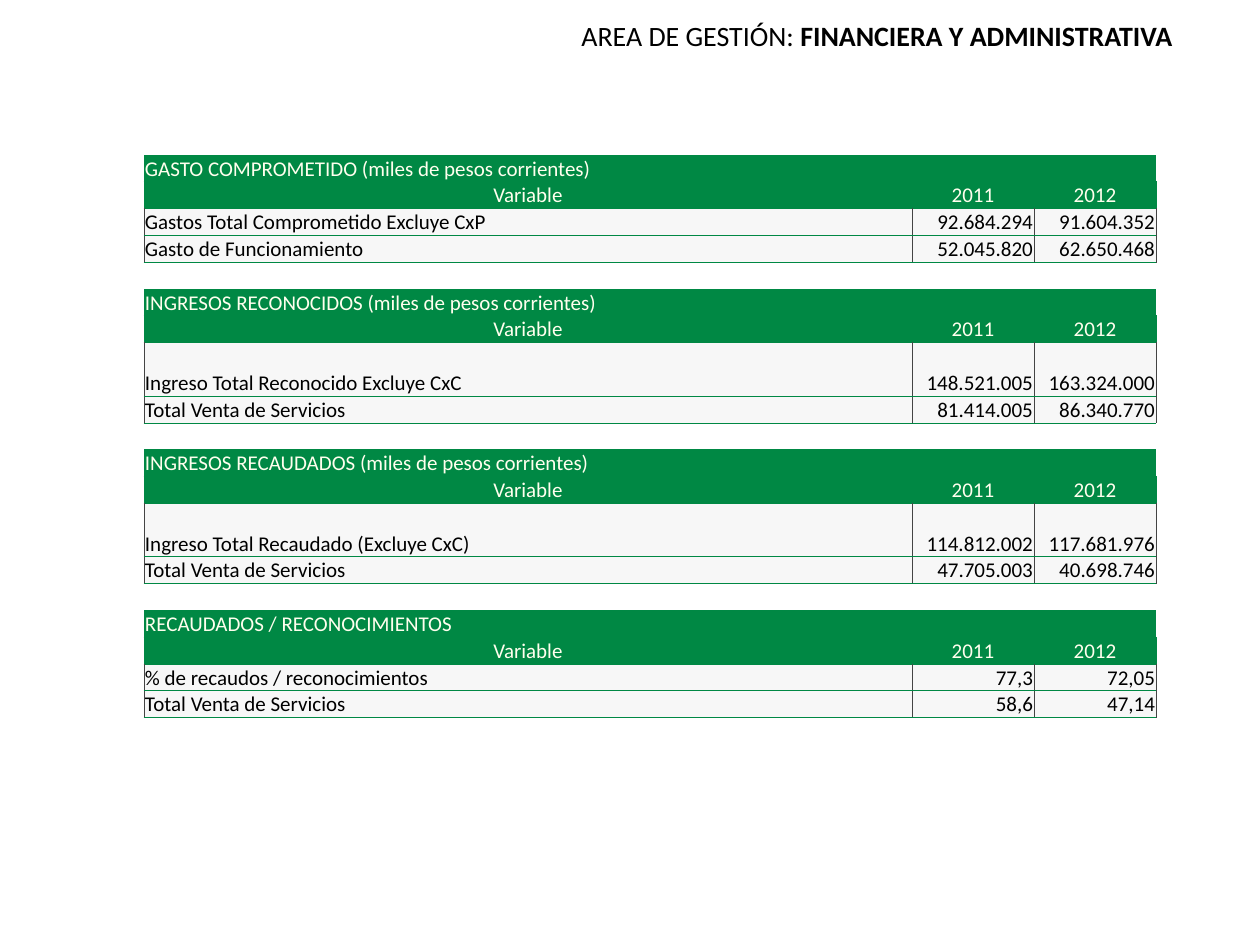
from lxml.etree import SubElement
from pptx import Presentation
from pptx.dml.color import RGBColor
from pptx.enum.text import MSO_ANCHOR, PP_ALIGN
from pptx.oxml.ns import qn
from pptx.util import Emu, Pt

SCALE = 914400 // 126
COLORS = {"green": "008844", "cream": "FFFFEE", "black": "000000", "light": "F7F7F7", "rule": "444444"}
NO_STYLE = "{2D5ABB26-0587-4C30-8999-92F81FD0307C}"
YEARS = ("Variable", "2011", "2012")
BLOCKS = [
    ("GASTO COMPROMETIDO (miles de pesos corrientes)", 1, [
        ("Gastos Total Comprometido Excluye CxP", "92.684.294", "91.604.352"),
        ("Gasto de Funcionamiento", "52.045.820", "62.650.468")]),
    ("INGRESOS RECONOCIDOS (miles de pesos corrientes)", 2, [
        ("Ingreso Total Reconocido Excluye CxC", "148.521.005", "163.324.000"),
        ("Total Venta de Servicios", "81.414.005", "86.340.770")]),
    ("INGRESOS RECAUDADOS (miles de pesos corrientes)", 2, [
        ("Ingreso Total Recaudado (Excluye CxC)", "114.812.002", "117.681.976"),
        ("Total Venta de Servicios", "47.705.003", "40.698.746")]),
    ("RECAUDADOS / RECONOCIMIENTOS", 1, [
        ("% de recaudos / reconocimientos", "77,3", "72,05"),
        ("Total Venta de Servicios", "58,6", "47,14")]),
]


def px(length):
    return Emu(round(length * SCALE))


def color(name):
    return RGBColor.from_string(COLORS[name])


def apply_format(target, values):
    for name, value in values.items():
        setattr(target, name, value)


class SlideBuilder:
    font_name = "Calibri"
    title_size = Pt(16)
    table_size = Pt(12)
    border_width = Pt(0.5)
    cell_format = {"margin_left": px(1), "margin_right": px(1), "margin_top": px(1),
                   "margin_bottom": 0, "vertical_anchor": MSO_ANCHOR.BOTTOM}

    def __init__(self, slide):
        self.slide = slide

    def title(self, runs, left, top, width, height):
        frame = self.slide.shapes.add_textbox(px(left), px(top), px(width), px(height)).text_frame
        apply_format(frame, {"word_wrap": True, "vertical_anchor": MSO_ANCHOR.MIDDLE})
        paragraph = frame.paragraphs[0]
        paragraph.alignment = PP_ALIGN.RIGHT
        for text, bold in runs:
            run = paragraph.add_run()
            run.text = text
            apply_format(run.font, {"name": self.font_name, "size": self.title_size, "bold": bold})
            run.font.color.rgb = color("black")

    def table(self, rows, left, top, height, widths):
        """Rows are (kind, units of height, texts); the units share the height."""
        shape = self.slide.shapes.add_table(len(rows), len(widths), px(left), px(top),
                                            px(sum(widths)), px(height))
        table = shape.table
        apply_format(table, {"first_row": False, "horz_banding": False})
        table._tbl.tblPr.find(qn("a:tableStyleId")).text = NO_STYLE
        for column, width in zip(table.columns, widths):
            column.width = px(width)
        unit = height / sum(units for _, units, _ in rows)
        for index, (kind, units, texts) in enumerate(rows):
            table.rows[index].height = px(unit * units)
            for column in range(len(widths)):
                self.cell(table.cell(index, column), kind, column, texts[column])
            if kind in ("heading", "gap"):
                table.cell(index, 0).merge(table.cell(index, len(widths) - 1))

    def cell(self, cell, kind, column, text):
        apply_format(cell, self.cell_format)
        sides = {"heading": "B", "years": "LRTB", "data": "LRTB", "gap": "T"}[kind]
        for side in sides:
            dark = kind == "data" and side in "LR"
            self.border(cell, side, "rule" if dark else "green")
        if kind == "gap":
            cell.fill.background()
        else:
            cell.fill.solid()
            cell.fill.fore_color.rgb = color("light" if kind == "data" else "green")
        paragraph = cell.text_frame.paragraphs[0]
        if not text:
            paragraph._p.get_or_add_endParaRPr().set("sz", str(self.table_size.centipoints))
            return
        if kind == "years":
            paragraph.alignment = PP_ALIGN.CENTER
        elif column:
            paragraph.alignment = PP_ALIGN.RIGHT
        run = paragraph.add_run()
        run.text = text
        apply_format(run.font, {"name": self.font_name, "size": self.table_size})
        run.font.color.rgb = color("black" if kind == "data" else "cream")

    def border(self, cell, side, color_name):
        line = SubElement(cell._tc.get_or_add_tcPr(), qn(f"a:ln{side}"), w=str(self.border_width))
        SubElement(SubElement(line, qn("a:solidFill")), qn("a:srgbClr"), val=COLORS[color_name])


def table_rows():
    rows = []
    for heading, first_units, data in BLOCKS:
        if rows:
            rows.append(("gap", 1, ("", "", "")))
        rows.append(("heading", 1, (heading, "", "")))
        rows.append(("years", 1, YEARS))
        rows += [("data", units, texts) for units, texts in zip((first_units, 1), data)]
    return rows


def main():
    presentation = Presentation()
    presentation.slide_width, presentation.slide_height = px(1260), px(945)
    builder = SlideBuilder(presentation.slides.add_slide(presentation.slide_layouts[6]))
    builder.title([("AREA DE GESTIÓN: ", False), ("FINANCIERA Y ADMINISTRATIVA", True)],
                  64, 1, 1121, 68)
    builder.table(table_rows(), 144, 155, 563, (768, 122, 122))
    presentation.save("out.pptx")


if __name__ == "__main__":
    main()
